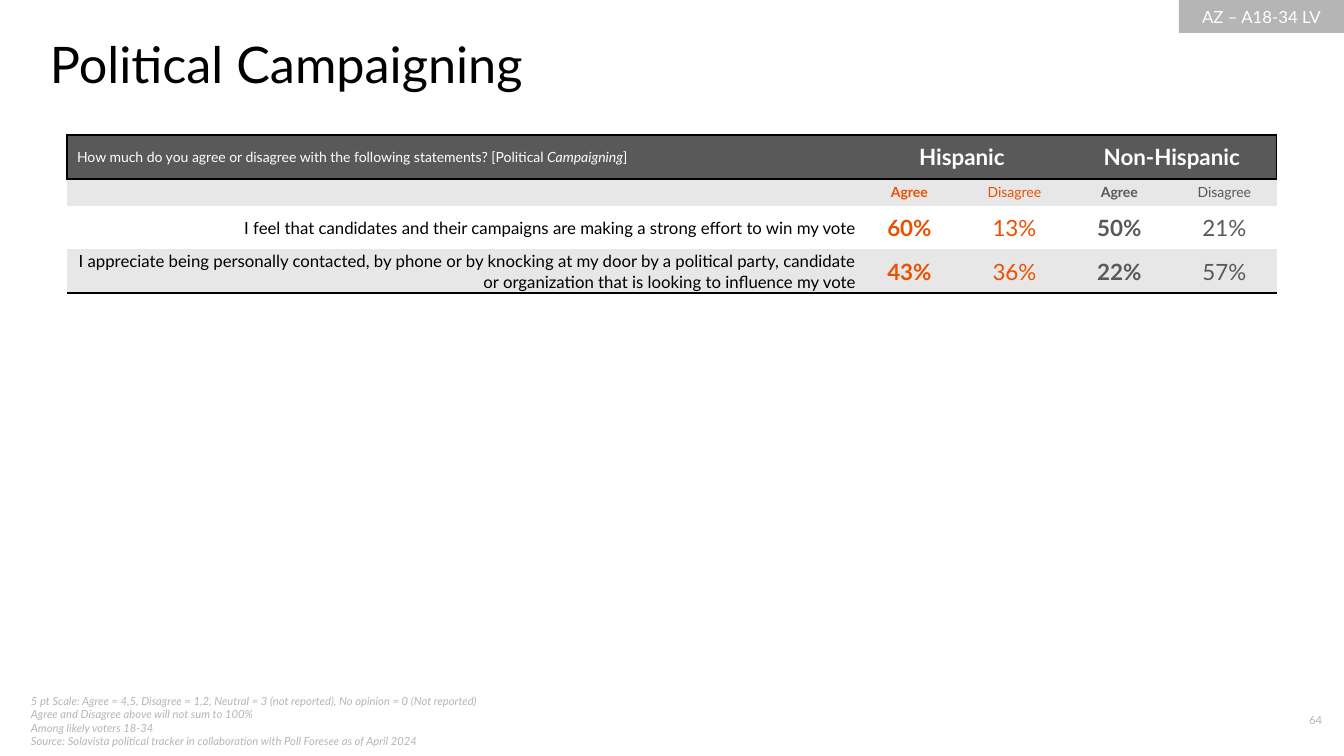
from dataclasses import dataclass

import pptx
import pptx.dml.color
import pptx.enum.shapes
import pptx.enum.text
import pptx.oxml
import pptx.oxml.ns
import pptx.util

SCALE = 914400 / 100.8
FACE = "Lato"
PLAIN_STYLE = "{2D5ABB26-0587-4C30-8999-92F81FD0307C}"
HUES = {
    "black": "000000",
    "white": "FFFFFF",
    "dark": "595959",
    "mid": "B5B5B5",
    "light": "E7E7E7",
    "orange": "EA5101",
}
ALIGN = pptx.enum.text.PP_ALIGN
ANCHOR = pptx.enum.text.MSO_ANCHOR


@dataclass
class Style:
    size: int
    hue: str
    align: ALIGN = ALIGN.LEFT
    bold: bool = False
    slant: bool = False


@dataclass
class Box:
    text: str
    left: int
    top: int
    width: int
    height: int
    style: Style
    anchor: ANCHOR = ANCHOR.MIDDLE
    fill: str = ""
    inset: bool = True


@dataclass
class Row:
    label: str
    values: tuple[str, ...]
    height: int
    fill: str
    size: int
    tight: bool = False


BOXES = [
    Box(
        "5 pt Scale: Agree = 4,5, Disagree = 1,2, Neutral = 3 (not reported), "
        "No opinion = 0 (Not reported)\n"
        "Agree and Disagree above will not sum to 100%\n"
        "Among likely voters 18-34\n"
        "Source: Solavista political tracker in collaboration with Poll Foresee "
        "as of April 2024",
        21, 701, 515, 40, Style(8, "mid", slant=True),
    ),
    Box("64", 1243, 708, 89, 27, Style(8, "mid", ALIGN.RIGHT), ANCHOR.TOP),
    Box("AZ – A18-34 LV", 1179, 0, 165, 33, Style(12, "white", ALIGN.CENTER),
        fill="mid"),
    Box("Political Campaigning", 50, 33, 1210, 62, Style(36, "black"),
        ANCHOR.TOP, inset=False),
]
QUERY = ("How much do you agree or disagree with the following statements? "
         "[Political ", "Campaigning", "]")
GROUPS = ("Hispanic", "Non-Hispanic")
HEAD = 44
ROWS = [
    Row("", ("Agree", "Disagree") * 2, 27, "light", 10),
    Row("I feel that candidates and their campaigns are making a strong effort "
        "to win my vote", ("60%", "13%", "50%", "21%"), 43, "white", 16, True),
    Row("I appreciate being personally contacted, by phone or by knocking at my "
        "door by a political party, candidate or organization that is looking to "
        "influence my vote", ("43%", "36%", "22%", "57%"), 44, "light", 16, True),
]
WIDTHS = (790, 105, 105, 105, 105)


def px(count: int) -> pptx.util.Emu:
    return pptx.util.Emu(round(count * SCALE))


def rgb(hue: str) -> pptx.dml.color.RGBColor:
    return pptx.dml.color.RGBColor.from_string(HUES[hue])


def paint(part, hue: str) -> None:
    part.fill.solid()
    part.fill.fore_color.rgb = rgb(hue)


def dress(para, style: Style) -> None:
    """Apply alignment and font to a whole paragraph."""
    para.alignment = style.align
    font = para.font
    font.name = FACE
    font.size = pptx.util.Pt(style.size)
    font.bold = style.bold
    font.italic = style.slant
    font.color.rgb = rgb(style.hue)


def draw_box(slide, box: Box) -> None:
    place = [px(n) for n in (box.left, box.top, box.width, box.height)]
    if box.fill:
        kind = pptx.enum.shapes.MSO_SHAPE.RECTANGLE
        shape = slide.shapes.add_shape(kind, *place)
        shape.shadow.inherit = False
        paint(shape, box.fill)
        shape.line.fill.background()
    else:
        shape = slide.shapes.add_textbox(*place)
    frame = shape.text_frame
    frame.word_wrap = True
    frame.vertical_anchor = box.anchor
    if not box.inset:
        frame.margin_left = frame.margin_right = 0
        frame.margin_top = frame.margin_bottom = 0
    frame.text = box.text
    for para in frame.paragraphs:
        dress(para, box.style)


def fill_cell(cell, text: str, style: Style, fill: str,
              edges: dict[str, float], tight: bool = False) -> None:
    """Set text, edges (side letter to points, in L R T B order) and fill."""
    props = cell._tc.get_or_add_tcPr()
    space = pptx.oxml.ns.nsdecls("a")
    for side, points in edges.items():
        props.append(pptx.oxml.parse_xml(
            f'<a:ln{side} {space} w="{pptx.util.Pt(points)}"><a:solidFill>'
            f'<a:srgbClr val="{HUES["black"]}"/></a:solidFill></a:ln{side}>'))
    paint(cell, fill)
    cell.vertical_anchor = ANCHOR.MIDDLE
    if tight:
        cell.margin_left = cell.margin_right = cell.margin_top = px(1)
        cell.margin_bottom = 0
    if text:
        cell.text = text
    dress(cell.text_frame.paragraphs[0], style)


def fill_head(table) -> None:
    rule = {"T": 2.25, "B": 2.25}
    first = table.cell(0, 0)
    fill_cell(first, "", Style(10, "white"), "dark", {"L": 1} | rule)
    para = first.text_frame.paragraphs[0]
    for part in QUERY:
        run = para.add_run()
        run.text = part
        run.font.italic = part == QUERY[1]
    style = Style(16, "white", ALIGN.CENTER, bold=True)
    for col, group in zip((1, 3), GROUPS):
        cell, mate = table.cell(0, col), table.cell(0, col + 1)
        cell.merge(mate)
        edges = {"R": 1} | rule if col == 3 else rule
        fill_cell(cell, group, style, "dark", edges)
        fill_cell(mate, "", style, "dark", edges)


def draw_table(slide) -> None:
    heights = [HEAD] + [row.height for row in ROWS]
    frame = slide.shapes.add_table(
        len(heights), len(WIDTHS), px(67), px(135),
        px(sum(WIDTHS)), px(sum(heights)))
    table = frame.table
    table.first_row = table.horz_banding = False
    table._tbl.tblPr.find(pptx.oxml.ns.qn("a:tableStyleId")).text = PLAIN_STYLE
    for col, width in zip(table.columns, WIDTHS):
        col.width = px(width)
    for line, height in zip(table.rows, heights):
        line.height = px(height)
    fill_head(table)
    for num, row in enumerate(ROWS, 1):
        edges = {"B": 2.25} if num == len(ROWS) else {}
        label = Style(12 if row.label else 10, "black", ALIGN.RIGHT)
        fill_cell(table.cell(num, 0), row.label, label, row.fill, edges, row.tight)
        for col, value in enumerate(row.values, 1):
            style = Style(row.size, "orange" if col < 3 else "dark",
                          ALIGN.CENTER, bold=col % 2 == 1)
            fill_cell(table.cell(num, col), value, style, row.fill, edges, row.tight)


def main() -> None:
    deck = pptx.Presentation()
    deck.slide_width, deck.slide_height = px(1344), px(756)
    slide = deck.slides.add_slide(deck.slide_layouts[6])
    for box in BOXES:
        draw_box(slide, box)
    draw_table(slide)
    deck.save("out.pptx")


if __name__ == "__main__":
    main()
